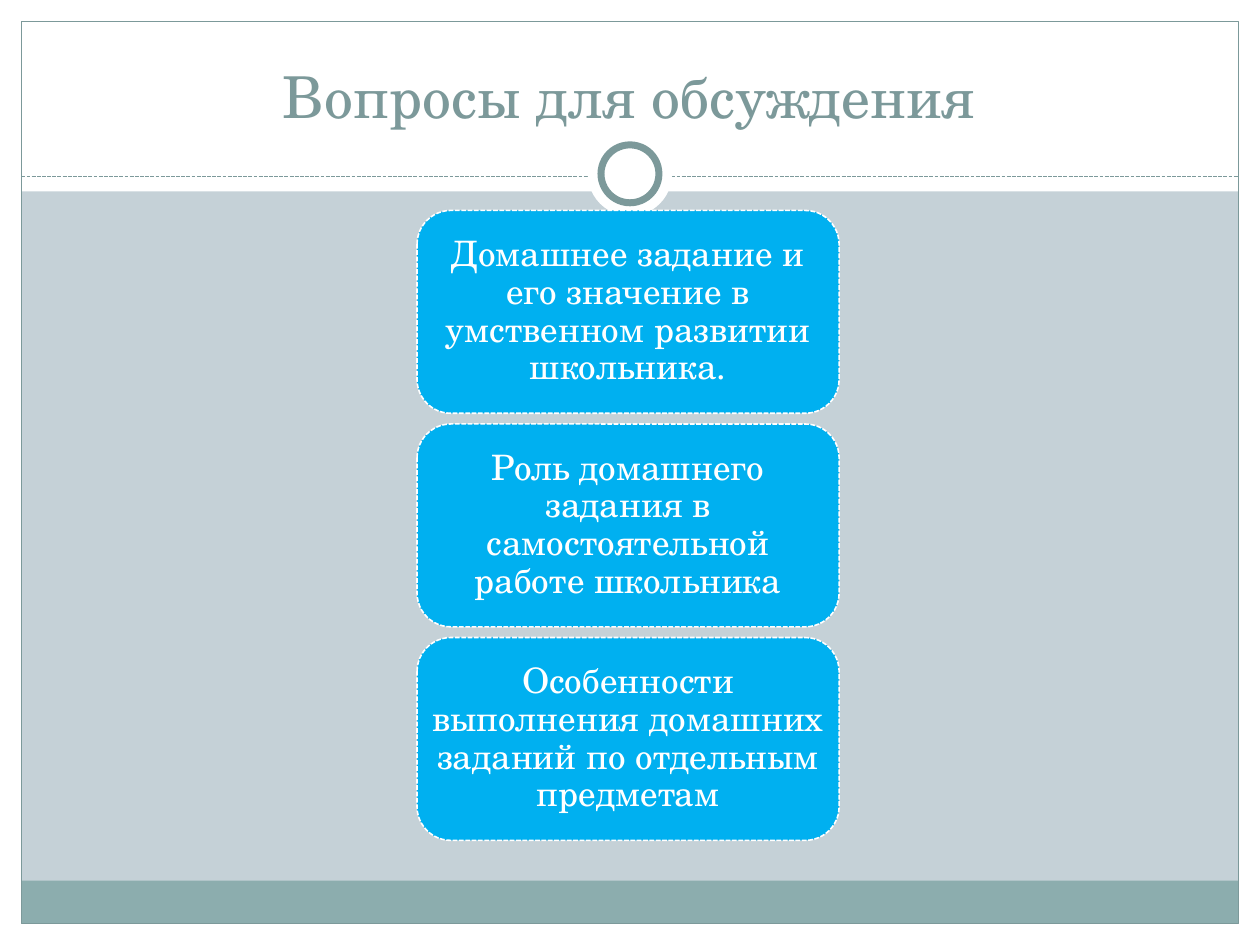
"""Build the discussion-questions slide with three stacked cards."""
from lxml.etree import SubElement
from pptx import Presentation
from pptx.dml.color import RGBColor
from pptx.enum.dml import MSO_LINE
from pptx.enum.shapes import MSO_CONNECTOR, MSO_SHAPE
from pptx.enum.text import MSO_ANCHOR, MSO_AUTO_SIZE, PP_ALIGN
from pptx.oxml.ns import qn
from pptx.util import Inches, Pt

TITLE = "Вопросы для обсуждения"
QUESTIONS = [
    "Домашнее задание и его значение в умственном развитии школьника.",
    "Роль домашнего задания в самостоятельной работе школьника",
    "Особенности выполнения домашних заданий по отдельным предметам",
]
THEME = {
    "font": "TeX Gyre Schola",
    "title_size": 33,
    "card_size": 20,
    "background": "C5D1D7",
    "white": "FFFFFF",
    "accent": "7C999A",
    "footer": "8CADAE",
    "card": "00B0F0",
}
WIDTH, HEIGHT, MARGIN = 10, 7.5, 0.17
HEADER_HEIGHT, DIVIDER_TOP = 1.52, 1.4
TITLE_BOX = (0.33, 0.25, 9.33, 0.83)
RING_CENTER = (5, 1.38)
CARD_LEFT, CARD_TOP, CARD_WIDTH, CARD_HEIGHT, CARD_PITCH = 3.31, 1.67, 3.35, 1.61, 1.695
BANDS = [
    ((0, HEIGHT - MARGIN, WIDTH, MARGIN), "white"),
    ((0, 0, WIDTH, HEADER_HEIGHT), "white"),
    ((0, 0, MARGIN, HEIGHT), "white"),
    ((WIDTH - MARGIN, 0, MARGIN, HEIGHT), "white"),
    ((MARGIN, 6.99, WIDTH - 2 * MARGIN, 0.34), "footer"),
]


def color(name):
    return RGBColor.from_string(THEME[name])


def style_line(line, name, width, dash=None):
    line.color.rgb = color(name)
    line.width = Pt(width)
    if dash:
        line.dash_style = dash


def add_shape(slide, kind, box, fill=None, line=None, width=0.75, dash=None):
    shape = slide.shapes.add_shape(kind, *map(Inches, box))
    shape.shadow.inherit = False
    if fill:
        shape.fill.solid()
        shape.fill.fore_color.rgb = color(fill)
    else:
        shape.fill.background()
    if line:
        style_line(shape.line, line, width, dash)
    else:
        shape.line.fill.background()
    return shape


def add_circle(slide, diameter, **style):
    left, top = (center - diameter / 2 for center in RING_CENTER)
    add_shape(slide, MSO_SHAPE.OVAL, (left, top, diameter, diameter), "white", **style)


def set_text(shape, text, size, name, anchor):
    frame = shape.text_frame
    frame.text = text
    frame.word_wrap = True
    frame.auto_size = MSO_AUTO_SIZE.NONE
    frame.vertical_anchor = anchor
    paragraph = frame.paragraphs[0]
    paragraph.alignment = PP_ALIGN.CENTER
    paragraph.font.name = THEME["font"]
    paragraph.font.size = Pt(THEME[size])
    paragraph.font.color.rgb = color(name)
    return frame


def add_frame(slide):
    for box, fill in BANDS:
        add_shape(slide, MSO_SHAPE.RECTANGLE, box, fill)
    border = (MARGIN, MARGIN, WIDTH - 2 * MARGIN, HEIGHT - 2 * MARGIN)
    add_shape(slide, MSO_SHAPE.RECTANGLE, border, line="accent")
    ends = (MARGIN, DIVIDER_TOP, WIDTH - MARGIN, DIVIDER_TOP)
    divider = slide.shapes.add_connector(MSO_CONNECTOR.STRAIGHT, *map(Inches, ends))
    style_line(divider.line, "accent", 0.75, MSO_LINE.SQUARE_DOT)
    SubElement(divider._element.spPr, qn("a:effectLst"))
    add_circle(slide, 0.67)
    add_circle(slide, 0.46, line="accent", width=4)


def add_title(slide):
    title = slide.shapes.title
    title.left, title.top, title.width, title.height = map(Inches, TITLE_BOX)
    set_text(title, TITLE, "title_size", "accent", MSO_ANCHOR.BOTTOM)
    slide.shapes._spTree.append(title._element)


def add_cards(slide):
    for index, question in enumerate(QUESTIONS):
        box = (CARD_LEFT, CARD_TOP + index * CARD_PITCH, CARD_WIDTH, CARD_HEIGHT)
        card = add_shape(slide, MSO_SHAPE.ROUNDED_RECTANGLE, box, "card",
                         "white", 0.9, MSO_LINE.SQUARE_DOT)
        frame = set_text(card, question, "card_size", "white", MSO_ANCHOR.MIDDLE)
        frame.margin_left = frame.margin_right = 0
        frame.margin_top = frame.margin_bottom = 0
        frame.paragraphs[0].line_spacing = 0.9


def main():
    presentation = Presentation()
    presentation.slide_width, presentation.slide_height = Inches(WIDTH), Inches(HEIGHT)
    slide = presentation.slides.add_slide(presentation.slide_layouts[5])
    slide.background.fill.solid()
    slide.background.fill.fore_color.rgb = color("background")
    add_frame(slide)
    add_title(slide)
    add_cards(slide)
    presentation.save("out.pptx")


if __name__ == "__main__":
    main()
